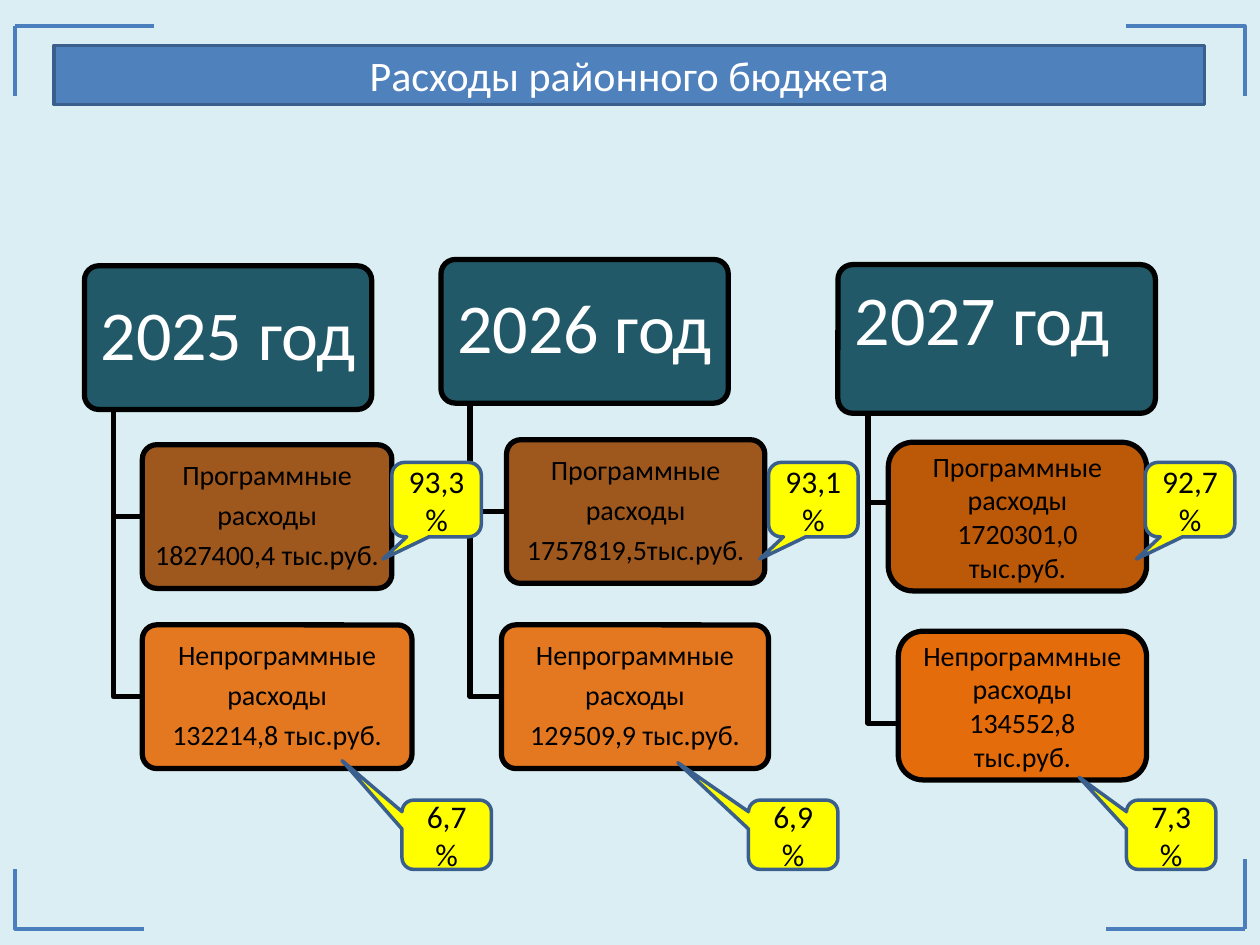
from dataclasses import dataclass
from lxml.etree import SubElement
from pptx import Presentation
from pptx.dml.color import RGBColor
from pptx.enum.shapes import MSO_CONNECTOR as CONN, MSO_SHAPE as SHAPE
from pptx.enum.text import MSO_ANCHOR as ANCHOR, PP_ALIGN as ALIGN
from pptx.oxml.ns import qn
from pptx.util import Inches, Pt

COLS, ROWS = 100, 75
UNIT = Inches(10) // COLS


@dataclass(frozen=True)
class Theme:
    """Colours, font and type sizes of the slide."""
    font: str = "Calibri"
    back: str = "DBEEF3"
    title: str = "4F81BD"
    edge: str = "3A5F8C"
    frame: str = "4B7EBC"
    head: str = "215968"
    program: str = "984807"
    program_deep: str = "BC5908"
    other: str = "E46C0A"
    note: str = "FFFF00"
    dark: str = "000000"
    light: str = "FFFFFF"
    title_pt: int = 24
    head_pt: int = 40
    item_pt: int = 16
    note_pt: int = 18


@dataclass(frozen=True)
class Box:
    """A rectangle in grid columns and rows."""
    x: float
    y: float
    w: float
    h: float

    def inner(self, x, y, w, h):
        """Return a box placed from this box's top left corner."""
        return Box(self.x + x, self.y + y, w, h)

    def emu(self):
        """Return left, top, width and height in EMU."""
        return [emu(v) for v in (self.x, self.y, self.w, self.h)]


T = Theme()


def emu(v):
    """Turn grid units into EMU."""
    return round(v * UNIT)


def rgb(code):
    """Turn a hex code into a colour."""
    return RGBColor.from_string(code)


def stroke(sp, color, width):
    """Set the outline of a shape or connector."""
    sp.line.color.rgb = rgb(color)
    sp.line.width = Pt(width)


def write(sp, text, size, color=T.dark, align=ALIGN.CENTER, anchor=ANCHOR.MIDDLE,
          inset=(0.1, 0.05), spacing=None, after=0):
    """Fill a shape with text, one paragraph for each line."""
    tf = sp.text_frame
    tf.word_wrap = True
    tf.vertical_anchor = anchor
    tf.margin_left = tf.margin_right = Inches(inset[0])
    tf.margin_top = tf.margin_bottom = Inches(inset[1])
    for i, words in enumerate(text.split("\n")):
        p = tf.add_paragraph() if i else tf.paragraphs[0]
        p.alignment = align
        p.line_spacing = spacing
        p.space_after = Pt(after)
        r = p.add_run()
        r.text = words
        r.font.name, r.font.size = T.font, Pt(size)
        r.font.color.rgb = rgb(color)


def block(s, kind, box, fill, line, width, adj=(), alpha=100):
    """Add a filled, outlined preset shape."""
    sp = s.shapes.add_shape(kind, *box.emu())
    sp.shadow.inherit = False
    sp.fill.solid()
    sp.fill.fore_color.rgb = rgb(fill)
    if alpha < 100:
        clr = sp._element.spPr.find(qn("a:solidFill"))[0]
        SubElement(clr, qn("a:alpha"), val=str(alpha * 1000))
    stroke(sp, line, width)
    for i, value in enumerate(adj):
        sp.adjustments[i] = value
    return sp


def link(s, x1, y1, x2, y2, color, width, bend=None):
    """Add a straight connector, or an elbow that turns at the given share."""
    kind = CONN.STRAIGHT if bend is None else CONN.ELBOW
    sp = s.shapes.add_connector(kind, *map(emu, (x1, y1, x2, y2)))
    stroke(sp, color, width)
    pr = sp._element.spPr
    SubElement(pr, qn("a:effectLst"))
    if bend is not None:
        av = pr.find(qn("a:prstGeom")).get_or_add_avLst()
        SubElement(av, qn("a:gd"), name="adj1", fmla=f"val {round(bend * 100000)}")


def branch(s, x1, y1, x2, y2):
    """Draw a line down and then right to an item."""
    fb = s.shapes.build_freeform(emu(x1), emu(y1))
    fb.add_line_segments([(emu(x1), emu(y2)), (emu(x2), emu(y2))], close=False)
    sp = fb.convert_to_shape()
    sp.shadow.inherit = False
    sp.fill.background()
    stroke(sp, T.dark, 3)


def frame(s, box):
    """Draw the four corner brackets around the slide."""
    l, t, r, b = box.x, box.y, box.x + box.w, box.y + box.h
    link(s, l, b - 4.7, l + 10.2, b, T.frame, 2.25, bend=0)
    link(s, r - 9.4, t, r, t + 5.5, T.frame, 2.25, bend=1)
    for x, y, dx, dy in ((l, t, 11, 5.5), (r, b, -11, -5.5)):
        link(s, x, y, x + dx, y, T.frame, 2.25)
        link(s, x, y, x, y + dy, T.frame, 2.25)


def title(s, box, text):
    """Add the title bar."""
    write(block(s, SHAPE.RECTANGLE, box, T.title, T.edge, 2), text, T.title_pt, T.light)


def year(s, box, text, items):
    """Add a year's heading with two items hung below it."""
    sp = block(s, SHAPE.ROUNDED_RECTANGLE, box, T.head, T.dark, 3, [0.1])
    write(sp, text, T.head_pt, T.light, inset=(0.08, 0.06), spacing=0.9)
    for place, words, fill in zip(*items, (T.program, T.other)):
        item = box.inner(*place)
        branch(s, box.x + 2.3, box.y + box.h, item.x, item.y + item.h / 2)
        sp = block(s, SHAPE.ROUNDED_RECTANGLE, item, fill, T.dark, 3, [0.1], alpha=90)
        write(sp, words, T.item_pt, inset=(0.03, 0.02), spacing=0.9, after=5.6)


def last_year(s, box, text, items):
    """Add the final year, with its heading at top left and solid items."""
    sp = block(s, SHAPE.ROUNDED_RECTANGLE, box, T.head, T.dark, 3, [0.1])
    write(sp, text, T.head_pt, T.light, align=ALIGN.LEFT, anchor=ANCHOR.TOP)
    x = box.x + 2.4
    branch(s, x, box.y + box.h, x + 2.7, box.y + 36.4)
    link(s, x, box.y + 18.9, x + 1.6, box.y + 18.9, T.dark, 3)
    for place, words, fill in zip(*items, (T.program_deep, T.other)):
        sp = block(s, SHAPE.ROUNDED_RECTANGLE, box.inner(*place), fill, T.dark, 3)
        write(sp, words, T.item_pt)


def shares(s, box, notes):
    """Add a row of percentage callouts."""
    for x, text, tail in notes:
        sp = block(s, SHAPE.ROUNDED_RECTANGULAR_CALLOUT, box.inner(x, 0, 7.1, box.h),
                   T.note, T.edge, 2, (*tail, 0.17))
        write(sp, text, T.note_pt)


def main():
    """Build and save the slide."""
    prs = Presentation()
    prs.slide_width, prs.slide_height = emu(COLS), emu(ROWS)
    s = prs.slides.add_slide(prs.slide_layouts[6])
    s.background.fill.solid()
    s.background.fill.fore_color.rgb = rgb(T.back)
    title(s, Box(4.3, 3.6, 91.3, 4.7), "Расходы районного бюджета")
    frame(s, Box(1.2, 2.1, 97.6, 71.6))
    labels = "Программные\nрасходы\n", "Непрограммные\nрасходы\n"
    years = (
        (year, Box(6.7, 21.1, 22.8, 11.4), "2025 год",
         ((4.6, 14.2, 19.8, 11.4), (4.6, 28.5, 21.4, 11.4)),
         ("1827400,4 тыс.руб.", "132214,8 тыс.руб.")),
        (year, Box(35, 20.6, 22.8, 11.4), "2026 год",
         ((5.2, 14.3, 20.5, 11.4), (4.8, 29, 21.2, 11.4)),
         ("1757819,5тыс.руб.", "129509,9 тыс.руб.")),
        (last_year, Box(66.5, 21, 25.2, 11.8), "2027 год",
         ((4, 14.1, 20.5, 11.8), (4.8, 29.1, 19.7, 11.8)),
         ("1720301,0 тыс.руб.", "134552,8 тыс.руб.")),
    )
    for draw, box, name, places, sums in years:
        draw(s, box, name, (places, [a + b for a, b in zip(labels, sums)]))
    shares(s, Box(0, 36.7, COLS, 5.9),
           [(31.1 + 29.9 * i, text, (-0.6, 0.8))
            for i, text in enumerate(("93,3%", "93,1%", "92,7%"))])
    shares(s, Box(0, 63.5, COLS, 5.5),
           [(31.9, "6,7 %", (-1.17, -1.07)), (59.4, "6,9 %", (-1.29, -1.04)),
            (89.4, "7,3 %", (-1.03, -0.83))])
    prs.save("out.pptx")


if __name__ == "__main__":
    main()
